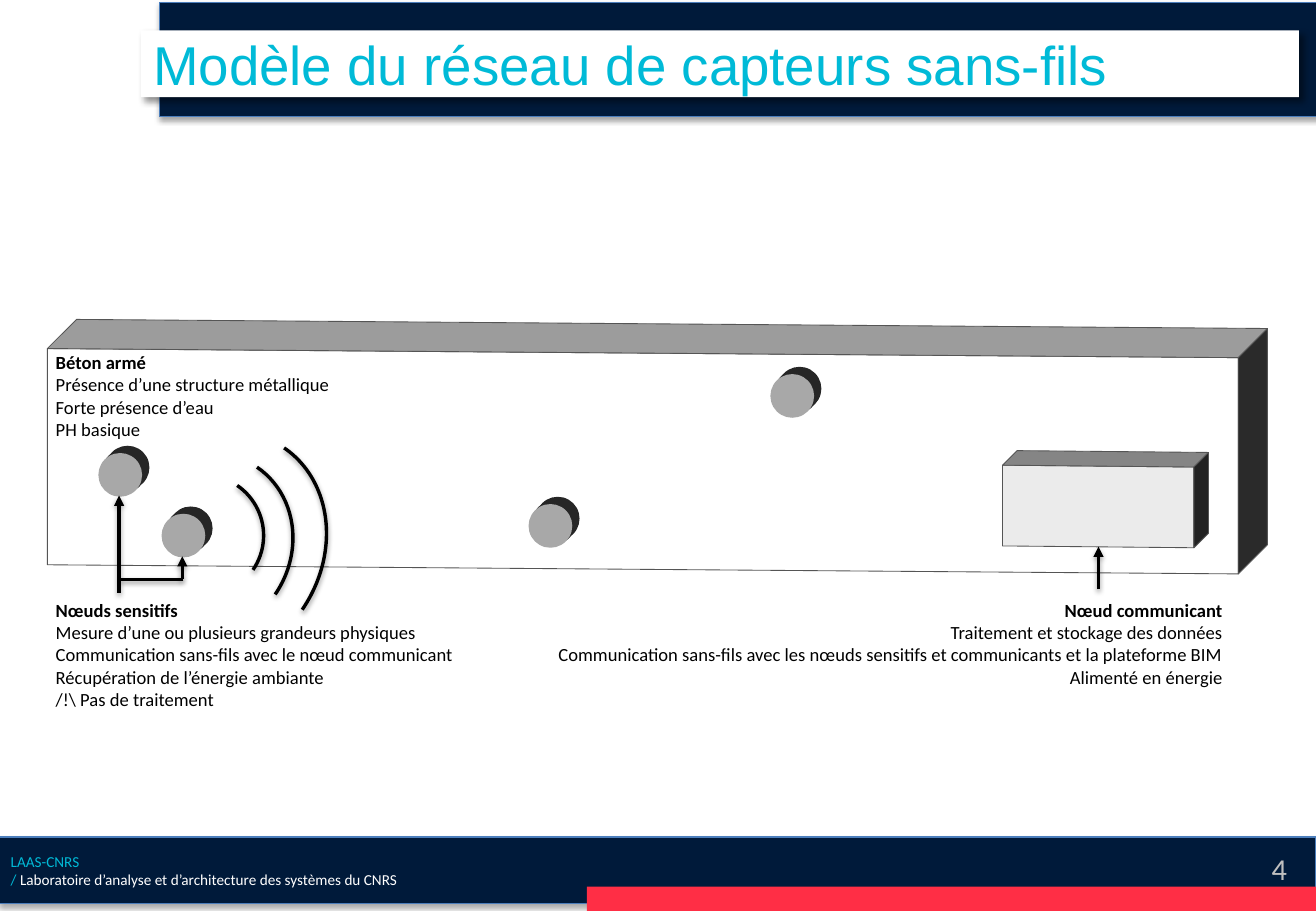
"""Build the slide on the wireless sensor network model."""
from lxml.etree import SubElement
from pptx import Presentation
from pptx.dml.color import RGBColor
from pptx.enum.shapes import MSO_CONNECTOR, MSO_SHAPE
from pptx.enum.text import MSO_ANCHOR, MSO_AUTO_SIZE, PP_ALIGN
from pptx.oxml.ns import qn
from pptx.util import Inches, Pt

COLORS = {
    "navy": "001A3A", "edge": "4B7EBC", "red": "FF2E45", "cyan": "00BAD7",
    "white": "FFFFFF", "black": "000000", "number": "BFBFBF",
    "beam_top": "9C9C9C", "beam_side": "2A2A2A", "outline": "555555",
    "box_front": "EBEBEB", "box_top": "858585", "box_side": "222222",
    "disc": "A8A8A8", "rim": "262626",
}
RGB = {name: RGBColor.from_string(value) for name, value in COLORS.items()}
CELL = Inches(0.1)
SOFT, DEEP, STROKE = (35, 3.1, 1.8, 90), (43, 4, 3, 45), (38, 3.1, 1.6, 90)


def grid(*cells):
    """Turn columns and rows of the grid into lengths."""
    return [round(cell * CELL) for cell in cells]


def style(item, fill=None, line=None, width=0.75, shadow=None, arrow=False):
    """Set the fill, line, arrowhead and shadow of a shape or connector."""
    if fill:
        item.fill.solid()
        item.fill.fore_color.rgb = RGB[fill]
    if line:
        item.line.color.rgb = RGB[line]
        item.line.width = Pt(width)
    else:
        item.line.fill.background()
    properties = item.element.spPr
    if arrow:
        SubElement(properties.find(qn("a:ln")), qn("a:tailEnd"), type="triangle")
    effects = SubElement(properties, qn("a:effectLst"))
    if shadow:
        alpha, blur, distance, angle = shadow
        outer = SubElement(
            effects, qn("a:outerShdw"), blurRad=str(Pt(blur)), dist=str(Pt(distance)),
            dir=str(angle * 60000), algn="t", rotWithShape="0")
        tint = SubElement(outer, qn("a:srgbClr"), val=COLORS["black"])
        SubElement(tint, qn("a:alpha"), val=str(alpha * 1000))


deck = Presentation()
deck.slide_width, deck.slide_height = grid(108.3, 75)
slide = deck.slides.add_slide(deck.slide_layouts[5])
shapes = slide.shapes

header = shapes.add_shape(MSO_SHAPE.RECTANGLE, *grid(13.1, 0.2, 96.1, 9.4))
style(header, "navy", "edge", shadow=SOFT)
footer = shapes.add_shape(MSO_SHAPE.RECTANGLE, *grid(-0.1, 68.9, 108.4, 5.5))
style(footer, "navy", "edge", shadow=SOFT)
red_strip = shapes.add_shape(MSO_SHAPE.RECTANGLE, *grid(48.3, 73, 60.7, 2))
style(red_strip, "red")

footer.text_frame.vertical_anchor = MSO_ANCHOR.MIDDLE
laboratory = footer.text_frame.paragraphs[0]
laboratory.alignment = PP_ALIGN.LEFT
laboratory.font.name, laboratory.font.size = "Calibri", Pt(9)
for words, color in (("LAAS-CNRS", "cyan"), ("/", "cyan"),
                     (" Laboratoire d’analyse et d’architecture des systèmes du CNRS", "white")):
    run = laboratory.add_run()
    run.text = words
    run.font.color.rgb = RGB[color]
    if words == "LAAS-CNRS":
        laboratory.add_line_break()

page = shapes.add_textbox(*grid(81.6, 69.5, 25.3, 4)).text_frame.paragraphs[0]
page.text = "4"
page.alignment = PP_ALIGN.RIGHT
page.font.name, page.font.size = "Calibri", Pt(18)
page.font.color.rgb = RGB["number"]

title = shapes.title
title.left, title.top, title.width, title.height = grid(11.6, 2.5, 95.3, 5.5)
style(title, "white", shadow=DEEP)
shapes.element.append(title.element)
frame = title.text_frame
frame.text = "Modèle du réseau de capteurs sans-fils"
frame.auto_size = MSO_AUTO_SIZE.NONE
frame.vertical_anchor = MSO_ANCHOR.MIDDLE
frame.margin_top = frame.margin_bottom = 0
heading = frame.paragraphs[0]
heading.alignment = PP_ALIGN.LEFT
heading.font.name, heading.font.size = "Arial", Pt(32.4)
heading.font.color.rgb = RGB["cyan"]

blocks = (
    (3.9, 28.7, 98, 17.8, 0.75, 2.4, ("white", "beam_top", "beam_side")),
    (82.5, 38.3, 15.75, 6.65, 0.15, 1.2, ("box_front", "box_top", "box_side")),
)
for left, top, width, height, drop, depth, fills in blocks:
    right, bottom = left + width, top + height
    top_left, top_right = (left, top), (right, top + drop)
    low_left, low_right = (left, bottom), (right, bottom + drop)
    back_left, back_right, back_low = (
        (x + depth, y - depth) for x, y in (top_left, top_right, low_right))
    faces = ((top_left, top_right, low_right, low_left),
             (top_left, back_left, back_right, top_right),
             (top_right, back_right, back_low, low_right))
    for (start, *others), fill in zip(faces, fills):
        outline = shapes.build_freeform(*grid(*start))
        outline.add_line_segments([grid(*point) for point in others], close=True)
        style(outline.convert_to_shape(), fill, "outline", 0.5)

for left, top in ((63.4, 30.8), (8.1, 37.3), (13.3, 42.3), (43.5, 41.5)):
    for offset, fill in ((0.6, "rim"), (0.3, "rim"), (0, "disc")):
        disc = shapes.add_shape(MSO_SHAPE.OVAL, *grid(left + offset, top - offset, 3.6, 3.6))
        style(disc, fill)

for left, top, width, height in ((11.7, 39.1, 10, 10), (9.6, 37.1, 14.3, 15.6),
                                 (8.9, 35.1, 17.5, 20.3)):
    wave = shapes.add_shape(MSO_SHAPE.ARC, *grid(left, top, width, height))
    wave.rotation = 34.4
    wave.fill.background()
    style(wave, line="black", width=2, shadow=STROKE)

for ends, arrow in (((9.8, 48.8, 9.8, 40.8), True), ((15, 47.7, 15, 45.8), True),
                    ((15.1, 47.7, 9.9, 47.7), False), ((90.4, 48.5, 90.4, 45), True)):
    pointer = shapes.add_connector(MSO_CONNECTOR.STRAIGHT, *grid(*ends))
    style(pointer, line="black", width=2, shadow=STROKE, arrow=arrow)

captions = (
    ((3.6, 28.4, 34.9, 8.4), PP_ALIGN.LEFT,
     ("Béton armé", "Présence d’une structure métallique", "Forte présence d’eau",
      "PH basique")),
    ((3.6, 48.8, 40, 12.1), PP_ALIGN.LEFT,
     ("Nœuds sensitifs", "Mesure d’une ou plusieurs grandeurs physiques",
      "Communication sans-fils avec le nœud communicant",
      "Récupération de l’énergie ambiante", r"/!\ Pas de traitement")),
    ((39.2, 48.8, 62.4, 8.4), PP_ALIGN.RIGHT,
     ("Nœud communicant", "Traitement et stockage des données",
      "Communication sans-fils avec les nœuds sensitifs et communicants et la plateforme BIM",
      "Alimenté en énergie")),
)
for place, alignment, lines in captions:
    frame = shapes.add_textbox(*grid(*place)).text_frame
    frame.word_wrap = True
    frame.text = "\n".join(lines)
    for index, paragraph in enumerate(frame.paragraphs):
        paragraph.alignment = alignment
        paragraph.font.name, paragraph.font.size = "Calibri", Pt(11)
        paragraph.font.bold = index == 0
        paragraph.font.color.rgb = RGB["black"]

deck.save("out.pptx")
